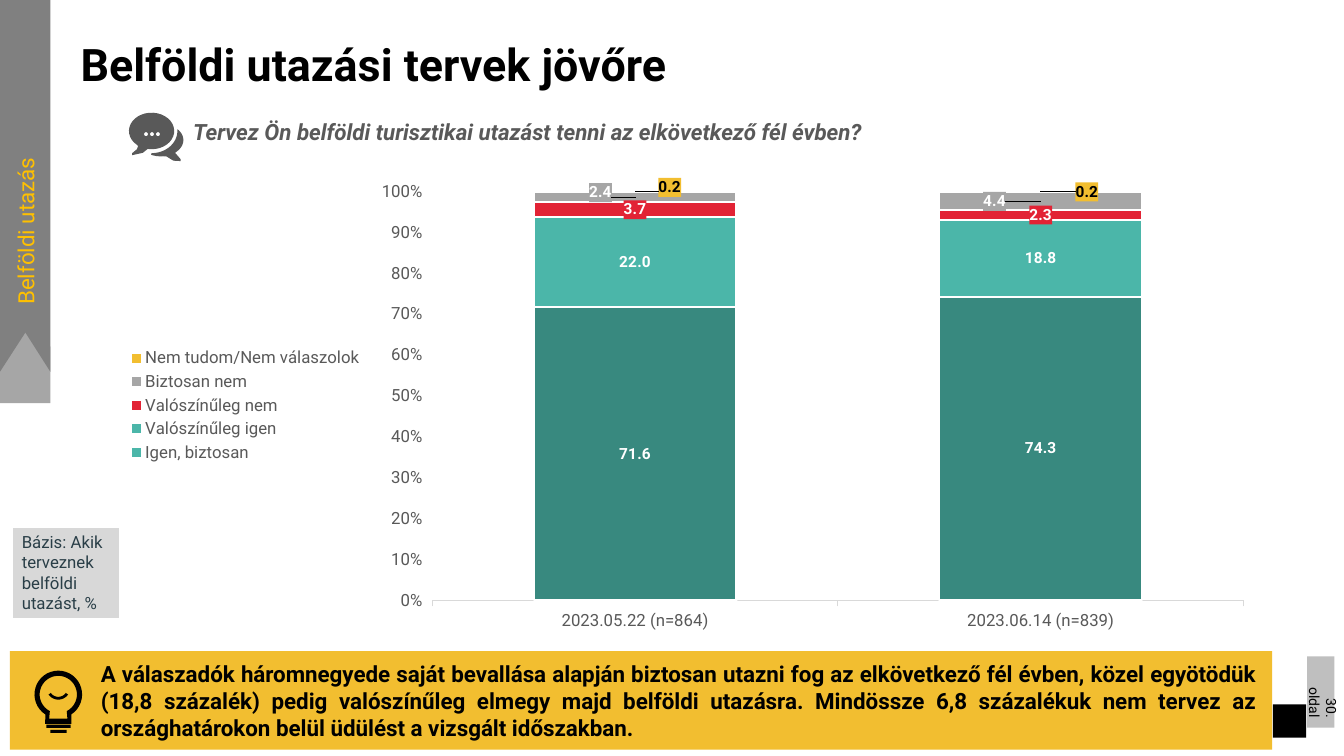
from dataclasses import dataclass
from math import cos, radians, sin

from lxml import etree
from pptx import Presentation, util as u
from pptx.chart.data import CategoryChartData
from pptx.dml.color import RGBColor
from pptx.enum import chart as ch, shapes, text

FONT = "Roboto"
BLACK = RGBColor(0x00, 0x00, 0x00)
WHITE = RGBColor(0xFF, 0xFF, 0xFF)
DARK_GREY = RGBColor(0x59, 0x59, 0x59)
RIBBON_GREY = RGBColor(0x80, 0x80, 0x80)
MID_GREY = RGBColor(0xA6, 0xA6, 0xA6)
PAGE_GREY = RGBColor(0xBF, 0xBF, 0xBF)
BASIS_GREY = RGBColor(0xD8, 0xD8, 0xD8)
AXIS_GREY = RGBColor(0xD9, 0xD9, 0xD9)
SLATE = RGBColor(0x29, 0x3E, 0x47)
DARK_TEAL = RGBColor(0x38, 0x89, 0x7F)
TEAL = RGBColor(0x4B, 0xB6, 0xA9)
RED = RGBColor(0xE2, 0x23, 0x35)
YELLOW = RGBColor(0xF2, 0xBE, 0x30)
GOLD = RGBColor(0xFF, 0xC0, 0x00)
CHART_NS = "http://schemas.openxmlformats.org/drawingml/2006/chart"
DRAWING_NS = "http://schemas.openxmlformats.org/drawingml/2006/main"
LABEL_FORMAT = "###0.0"

Points = list[tuple[float, float]]


@dataclass
class Label:
    """A piece of text in a box; box is left, top, width, height in cm."""
    words: str
    box: tuple[float, float, float, float]
    size: float
    color: RGBColor
    bold: bool = False
    italic: bool = False
    align: text.PP_ALIGN = text.PP_ALIGN.LEFT
    fill: RGBColor | None = None
    border: RGBColor | None = None
    left_inset: float = 0.25
    rotation: float = 0


@dataclass
class Answer:
    """A chart series; shifts move its labels by a share of the chart size."""
    name: str
    values: tuple[float, float]
    color: RGBColor
    bar_color: RGBColor | None = None
    label_color: RGBColor = WHITE
    label_fill: RGBColor | None = None
    shifts: tuple[tuple[float, float], ...] = ()


LABELS = [
    Label("Belföldi utazási tervek jövőre", (1.27, 0.81, 24.36, 2.82), 32, BLACK,
          bold=True, left_inset=0.76),
    Label("Bázis: Akik terveznek belföldi utazást, %", (0.3, 13.28, 2.72, 2.31), 12, SLATE,
          fill=BASIS_GREY, border=WHITE),
    Label("Tervez Ön belföldi turisztikai utazást tenni az elkövetkező fél évben?",
          (4.62, 2.84, 26.92, 1.4), 16, DARK_GREY, bold=True, italic=True),
    Label("A válaszadók háromnegyede saját bevallása alapján biztosan utazni fog az elkövetkező "
          "fél évben, közel egyötödük (18,8 százalék) pedig valószínűleg elmegy majd belföldi "
          "utazásra. Mindössze 6,8 százalékuk nem tervez az országhatárokon belül üdülést a "
          "vizsgált időszakban.",
          (2.29, 16.51, 29.64, 2.31), 16, BLACK, bold=True, align=text.PP_ALIGN.JUSTIFY),
    Label("Belföldi utazás", (-2.87, 3.94, 7.04, 0.94), 16, GOLD, rotation=270),
]
PAGE_NUMBER = Label("30. oldal", (32.94, 16.54, 0.69, 1.8), 10, BLACK,
                    align=text.PP_ALIGN.RIGHT, fill=PAGE_GREY)
WAVES = ["2023.05.22 (n=864)", "2023.06.14 (n=839)"]
ANSWERS = [
    Answer("Igen, biztosan", (71.6, 74.3), TEAL, bar_color=DARK_TEAL),
    Answer("Valószínűleg igen", (22, 18.8), TEAL),
    Answer("Valószínűleg nem", (3.7, 2.3), RED, label_fill=RED),
    Answer("Biztosan nem", (2.4, 4.4), MID_GREY, label_fill=MID_GREY,
           shifts=((-0.03, -0.01), (-0.04, 0))),
    Answer("Nem tudom/Nem válaszolok", (0.2, 0.2), YELLOW, label_color=BLACK,
           label_fill=YELLOW, shifts=((0.03, -0.01), (0.04, 0))),
]


def style_font(font, size: float, color: RGBColor, bold: bool = False) -> None:
    font.name, font.size, font.bold = FONT, u.Pt(size), bold
    font.color.rgb = color


def paint(shape, fill: RGBColor, border: RGBColor | None = None) -> None:
    shape.shadow.inherit = False
    shape.fill.solid()
    shape.fill.fore_color.rgb = fill
    if border is None:
        shape.line.fill.background()
    else:
        shape.line.color.rgb, shape.line.width = border, u.Pt(1.5)


def add_block(slide, box: tuple[float, ...], fill: RGBColor, border: RGBColor | None = None):
    block = slide.shapes.add_shape(shapes.MSO_SHAPE.RECTANGLE, *map(u.Cm, box))
    paint(block, fill, border)
    return block


def add_label(slide, label: Label):
    if label.fill is None:
        holder = slide.shapes.add_textbox(*map(u.Cm, label.box))
    else:
        holder = add_block(slide, label.box, label.fill, label.border)
    holder.rotation = label.rotation
    frame = holder.text_frame
    frame.word_wrap = True
    frame.vertical_anchor = text.MSO_ANCHOR.TOP
    frame.margin_left = u.Cm(label.left_inset)
    paragraph = frame.paragraphs[0]
    paragraph.alignment = label.align
    run = paragraph.add_run()
    run.text = label.words
    style_font(run.font, label.size, label.color, label.bold)
    run.font.italic = label.italic
    return holder


def arc(cx: float, cy: float, rx: float, ry: float, start: int, end: int) -> Points:
    """Points on an ellipse; degrees run clockwise from the right."""
    angles = [radians(start + (end - start) * i / 32) for i in range(33)]
    return [(cx + rx * cos(a), cy + ry * sin(a)) for a in angles]


def rectangle(left: float, top: float, right: float, bottom: float) -> Points:
    return [(left, top), (right, top), (right, bottom), (left, bottom)]


def add_outline(slide, contours: list[Points], fill: RGBColor) -> None:
    scaled = [[(x * 1000, y * 1000) for x, y in contour] for contour in contours]
    builder = slide.shapes.build_freeform(*scaled[0][0], scale=u.Cm(0.001))
    for number, contour in enumerate(scaled):
        if number:
            builder.move_to(*contour[0])
        builder.add_line_segments(contour[1:], close=True)
    paint(builder.convert_to_shape(), fill)


def set_layout(parent, index: int, **values) -> None:
    """Give a chart part a manual place, as shares of the chart size."""
    for old in parent.findall(f"{{{CHART_NS}}}layout"):
        parent.remove(old)
    layout = etree.Element(f"{{{CHART_NS}}}layout")
    manual = etree.SubElement(layout, f"{{{CHART_NS}}}manualLayout")
    for tag, value in values.items():
        etree.SubElement(manual, f"{{{CHART_NS}}}{tag}").set("val", str(value))
    parent.insert(index, layout)


def label_background(color: RGBColor):
    return etree.fromstring(
        f'<c:spPr xmlns:c="{CHART_NS}" xmlns:a="{DRAWING_NS}">'
        f'<a:solidFill><a:srgbClr val="{color}"/></a:solidFill></c:spPr>')


def style_answer(series, answer: Answer) -> None:
    paint_format = series.format
    paint_format.fill.solid()
    paint_format.fill.fore_color.rgb = answer.color
    paint_format.line.color.rgb, paint_format.line.width = WHITE, u.Pt(1.5)
    if answer.bar_color:
        for index in range(len(WAVES)):
            bar = series.points[index].format
            bar.fill.solid()
            bar.fill.fore_color.rgb = answer.bar_color
            bar.line.color.rgb, bar.line.width = WHITE, u.Pt(1.5)
    labels = series.data_labels
    labels.show_value = True
    labels.position = ch.XL_LABEL_POSITION.CENTER
    labels.number_format, labels.number_format_is_linked = LABEL_FORMAT, False
    style_font(labels.font, 11, answer.label_color, True)
    if answer.label_fill:
        labels._element.find(f"{{{CHART_NS}}}numFmt").addnext(label_background(answer.label_fill))
    for index, (dx, dy) in enumerate(answer.shifts):
        moved = series.points[index].data_label
        moved.position = ch.XL_LABEL_POSITION.CENTER
        style_font(moved.font, 11, answer.label_color, True)
        element = labels._element.findall(f"{{{CHART_NS}}}dLbl")[index]
        set_layout(element, 1, x=dx, y=dy)
        number = etree.Element(f"{{{CHART_NS}}}numFmt", formatCode=LABEL_FORMAT, sourceLinked="0")
        element.insert(2, number)
        element.insert(3, label_background(answer.label_fill))


def add_plans_chart(slide) -> None:
    data = CategoryChartData(number_format=LABEL_FORMAT)
    data.categories = WAVES
    for answer in ANSWERS:
        data.add_series(answer.name, answer.values)
    plans = slide.shapes.add_chart(ch.XL_CHART_TYPE.COLUMN_STACKED_100,
                                   *map(u.Cm, (2.84, 4.32, 29.08, 11.79)), data).chart
    style_font(plans.font, 10, BLACK)
    plans.has_title = False
    plot = plans.plots[0]
    plot.gap_width, plot.overlap, plot.vary_by_categories = 100, 100, False
    for series, answer in zip(plot.series, ANSWERS):
        style_answer(series, answer)
    for axis in (plans.category_axis, plans.value_axis):
        style_font(axis.tick_labels.font, 12, DARK_GREY)
        axis.has_major_gridlines = False
        axis.major_tick_mark = ch.XL_TICK_MARK.OUTSIDE
    plans.category_axis.format.line.color.rgb = AXIS_GREY
    plans.category_axis.format.line.width = u.Pt(0.75)
    shares = plans.value_axis
    shares.format.line.fill.background()
    shares.major_unit = 0.1
    shares.tick_labels.number_format, shares.tick_labels.number_format_is_linked = "0%", False
    plans.has_legend = True
    legend = plans.legend
    legend.position, legend.include_in_layout = ch.XL_LEGEND_POSITION.LEFT, False
    style_font(legend.font, 12, DARK_GREY)
    edges = {"xMode": "edge", "yMode": "edge"}
    set_layout(legend._element, 1, **edges, x=0.01, y=0.37, w=0.21, h=0.26)
    plot_area = plans._chartSpace.chart.plotArea
    set_layout(plot_area, 0, layoutTarget="inner", **edges, x=0.277, y=0.043, w=0.703, h=0.874)


def main() -> None:
    deck = Presentation()
    deck.slide_width, deck.slide_height = u.Cm(33.87), u.Cm(19.05)
    slide = deck.slides.add_slide(deck.slide_layouts[6])

    # Side ribbon, page number and message band
    add_block(slide, (32.08, 17.75, 0.84, 0.84), BLACK)
    page = add_label(slide, PAGE_NUMBER)
    page.text_frame.vertical_anchor = text.MSO_ANCHOR.MIDDLE
    page.text_frame._txBody.bodyPr.set("vert", "vert")
    add_outline(slide, [[(0, 10.16), (1.27, 10.16), (1.27, 8.74), (0.64, 8.15), (0, 8.74)]],
                MID_GREY)
    add_outline(slide, [[(0, 9.37), (0.64, 8.38), (1.27, 9.37), (1.27, 0), (0, 0)]], RIBBON_GREY)
    add_block(slide, (0.25, 16.41, 31.81, 2.48), YELLOW)

    # Light bulb: glass, smile and two bars of the base
    add_outline(slide, [
        arc(1.47, 17.5, 0.6, 0.6, 123, 417) + [(1.8, 18.24), (1.14, 18.24)],
        arc(1.47, 17.5, 0.47, 0.47, 117, 423) + [(1.7, 18.11), (1.24, 18.11)],
        arc(1.47, 17.33, 0.3, 0.3, 35, 145) + arc(1.47, 17.33, 0.23, 0.23, 145, 35),
        rectangle(1.17, 18.26, 1.78, 18.34),
        rectangle(1.27, 18.39, 1.68, 18.47),
    ], BLACK)

    # Speech bubbles: the rear one, then the front one with three dots
    add_outline(slide, [
        arc(4.05, 3.53, 0.57, 0.41, -42, 49)
        + [(4.42, 3.86), (4.55, 4.01), (4.55, 4.06), (4.37, 4.05), (4.19, 3.94)]
        + arc(4.05, 3.53, 0.57, 0.41, 84, 115) + arc(3.82, 3.3, 0.65, 0.56, 90, 0),
    ], DARK_GREY)
    add_outline(slide, [
        arc(3.82, 3.3, 0.57, 0.46, 130, 460)
        + [(3.6, 3.85), (3.33, 3.91), (3.33, 3.86), (3.45, 3.76), (3.48, 3.68)],
        *[arc(3.83 + step * 0.15, 3.38, 0.05, 0.05, 0, 360) for step in (-1, 0, 1)],
    ], DARK_GREY)

    # Chart and texts
    add_plans_chart(slide)
    for label in LABELS:
        add_label(slide, label)
    deck.save("out.pptx")


if __name__ == "__main__":
    main()
